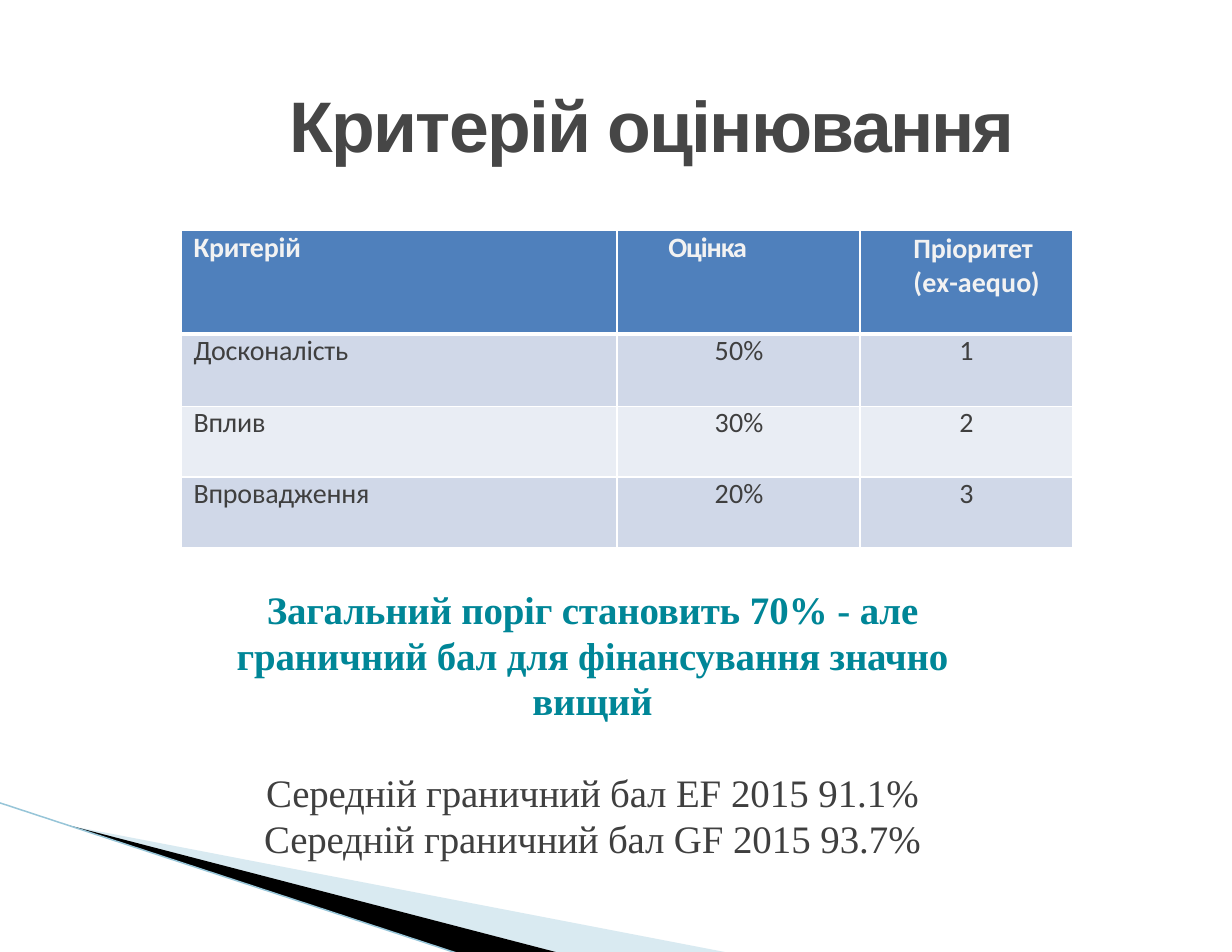
from lxml import etree
from pptx import Presentation
from pptx.dml.color import RGBColor
from pptx.enum.shapes import MSO_CONNECTOR
from pptx.enum.text import MSO_ANCHOR as Anchor, PP_ALIGN as Align
from pptx.oxml.ns import qn
from pptx.util import Pt

GREY, WHITE = "3F3F3F", "FFFFFF"


def color(hex_value):
    return RGBColor.from_string(hex_value)


def add_run(paragraph, text, font, size, hex_value, bold=False, spacing=0):
    run = paragraph.add_run()
    run.text = text
    run.font.name, run.font.size, run.font.bold = font, Pt(size), bold
    run.font.color.rgb = color(hex_value)
    run.font._element.set("spc", str(round(spacing * 100)))


def add_text_box(slide, box, top_inset=0):
    frame = slide.shapes.add_textbox(*map(Pt, box)).text_frame
    frame.word_wrap = True
    frame.margin_left = frame.margin_right = frame.margin_bottom = 0
    frame.margin_top = Pt(top_inset)
    return frame


def add_wedge(slide, points, fill, alpha=None):
    start, *rest = [(Pt(x), Pt(y)) for x, y in points]
    builder = slide.shapes.build_freeform(*start)
    builder.add_line_segments(rest, close=True)
    wedge = builder.convert_to_shape()
    wedge.shadow.inherit = False
    wedge.fill.solid()
    wedge.fill.fore_color.rgb = color(fill)
    wedge.line.fill.background()
    if alpha is not None:
        tint = wedge._element.spPr.find(".//" + qn("a:srgbClr"))
        etree.SubElement(tint, qn("a:alpha")).set("val", str(alpha * 1000))


def add_corner(slide, box):
    left, top, width, height = box
    right, bottom = left + width, top + height
    tip_x, tip_y = left + 42.5, top + 14
    fold = left + 361.5
    # Pale and black wedges
    add_wedge(slide, [(tip_x + 1, tip_y + 0.5), (right, bottom), (fold, bottom)],
              "A0CBDC", 40)
    add_wedge(slide, [(tip_x, tip_y), (fold, bottom), (left + 295, bottom)],
              "000000")
    # Edge line
    edge = slide.shapes.add_connector(
        MSO_CONNECTOR.STRAIGHT, Pt(left), Pt(top), Pt(left + 295), Pt(bottom))
    edge.line.color.rgb = color("97C5D8")
    edge.line.width = Pt(0.95)
    etree.SubElement(edge._element.spPr, qn("a:effectLst"))


def add_title(slide, box):
    frame = add_text_box(slide, box, top_inset=19.4)
    frame.vertical_anchor = Anchor.MIDDLE
    title = frame.paragraphs[0]
    title.alignment = Align.CENTER
    add_run(title, "Критерій оцінювання", "Arial", 46, "464646", True, -1.1)


def set_borders(cell, top, bottom):
    props = cell._tc.get_or_add_tcPr()
    widths = {"lnL": 1.02, "lnR": 1.02, "lnT": top, "lnB": bottom}
    for position, (side, width) in enumerate(widths.items()):
        border = etree.Element(qn("a:" + side), w=str(Pt(width)))
        fill = etree.SubElement(border, qn("a:solidFill"))
        etree.SubElement(fill, qn("a:srgbClr")).set("val", WHITE)
        props.insert(position, border)


def fill_cell(cell, lines, fill, text_color, bold, align, indent):
    cell.margin_left = cell.margin_right = cell.margin_top = cell.margin_bottom = 0
    cell.fill.solid()
    cell.fill.fore_color.rgb = color(fill)
    for index, runs in enumerate(lines):
        frame = cell.text_frame
        line = frame.add_paragraph() if index else frame.paragraphs[0]
        line.alignment = align
        line._p.get_or_add_pPr().set("marL", str(Pt(indent)))
        if len(lines) > 1:
            line.line_spacing = 1.02
        for text, spacing in runs:
            add_run(line, text, "Calibri", 18, text_color, bold, spacing)


def add_criteria_table(slide, box):
    header = [
        [[("Критерій", -0.1)]],
        [[("Оцінка", -0.7)]],
        [[("Пріоритет", -0.1)],
         [("(", 0.1), ("e", -0.3), ("x", 0), ("-", -0.1), ("a", 0.1),
          ("e", -0.1), ("qu", 0.1), ("o)", 0)]],
    ]
    criteria = [("Досконалість", "50", "1"), ("Вплив", "30", "2"),
                ("Впровадження", "20", "3")]
    table = slide.shapes.add_table(4, 3, *map(Pt, box)).table
    table.first_row = table.horz_banding = False
    for column, width in zip(table.columns, (280, 156.2, 136.8)):
        column.width = Pt(width)
    for row, height in zip(table.rows, (66.3, 46.6, 45.4, 45.4)):
        row.height = Pt(height)

    # Header row
    for col, (lines, indent) in enumerate(zip(header, (7.7, 33, 34.3))):
        cell = table.cell(0, col)
        fill_cell(cell, lines, "4F80BC", "F2F2F2", True, Align.LEFT, indent)
        set_borders(cell, 1.02, 3.05)

    # Criteria rows
    for row, (name, score, priority) in enumerate(criteria, 1):
        fill = "D0D8E8" if row % 2 else "E9EDF4"
        cells = [([(name, -0.1)], Align.LEFT, 7.7),
                 ([(score, 0.1), ("%", 0)], Align.CENTER, 0.7),
                 ([(priority, 0)], Align.CENTER, 0)]
        for col, (runs, align, indent) in enumerate(cells):
            cell = table.cell(row, col)
            fill_cell(cell, [runs], fill, GREY, False, align, indent)
            set_borders(cell, 3.05 if row == 1 else 1.02, 1.02)


def add_thresholds(slide, box):
    teal = "008697"
    statements = [
        (teal, True, 29.3, 0,
         [("Загальний поріг становить ", -0.1), ("70% - ", 0),
          ("але граничний бал для фінансування значно вищий", -0.1)]),
        (GREY, False, 29.4, 29.5,
         [("Середній граничний бал ", -0.1), ("EF 2015 91.1%", 0)]),
        (GREY, False, 29.4, 0,
         [("Середній граничний бал G", -0.1), ("F 2015 93.7%", 0)]),
    ]
    frame = add_text_box(slide, box)
    for index, (hue, bold, leading, gap, runs) in enumerate(statements):
        statement = frame.add_paragraph() if index else frame.paragraphs[0]
        statement.alignment = Align.CENTER
        statement.line_spacing = Pt(leading)
        if gap:
            statement.space_before = Pt(gap)
        for text, spacing in runs:
            add_run(statement, text, "Times New Roman", 25, hue, bold, spacing)


def main():
    deck = Presentation()
    deck.slide_width, deck.slide_height = Pt(792), Pt(612)
    slide = deck.slides.add_slide(deck.slide_layouts[6])
    add_corner(slide, (-0.5, 516, 471.5, 97))
    add_title(slide, (149, 32.4, 540.7, 75.6))
    add_thresholds(slide, (125.3, 377.3, 511.2, 176.4))
    add_criteria_table(slide, (116.7, 148.3, 573, 203.7))
    deck.save("out.pptx")


if __name__ == "__main__":
    main()
